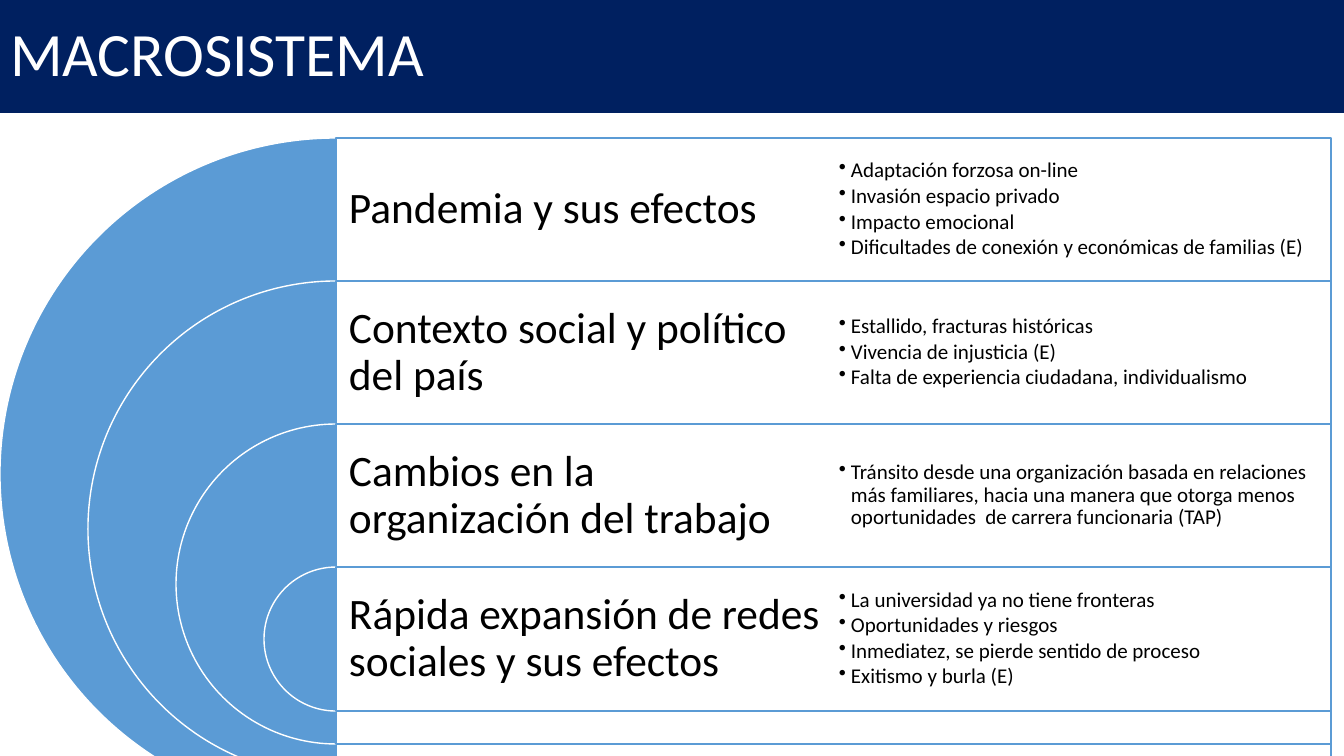
from lxml.etree import SubElement as Sub
from pptx import Presentation
from pptx.dml.color import RGBColor
from pptx.enum.shapes import MSO_SHAPE as Kind
from pptx.enum.text import MSO_ANCHOR as Anchor, PP_ALIGN as Align
from pptx.oxml.ns import qn
from pptx.util import Emu, Pt

TITLE = "MACROSISTEMA"
ROWS = [
    ("Pandemia y sus efectos", [
        "Adaptación forzosa on-line",
        "Invasión espacio privado",
        "Impacto emocional",
        "Dificultades de conexión y económicas de familias (E)",
    ]),
    ("Contexto social y político del país", [
        "Estallido, fracturas históricas",
        "Vivencia de injusticia (E)",
        "Falta de experiencia ciudadana, individualismo",
    ]),
    ("Cambios en la organización del trabajo", [
        "Tránsito desde una organización basada en relaciones más familiares, "
        "hacia una manera que otorga menos oportunidades  de carrera funcionaria (TAP)",
    ]),
    ("Rápida expansión de redes sociales y sus efectos", [
        "La universidad ya no tiene fronteras",
        "Oportunidades y riesgos",
        "Inmediatez, se pierde sentido de proceso",
        "Exitismo y burla (E)",
    ]),
]

NAVY = RGBColor(0x00, 0x20, 0x60)
BLUE = RGBColor(0x5B, 0x9B, 0xD5)
WHITE = RGBColor(0xFF, 0xFF, 0xFF)
BLACK = RGBColor(0x00, 0x00, 0x00)
FONT = "Calibri"

WIDE, HIGH = 1344, 756
BAR = 113
MID, TOP, ROW = 336, 138, 143
RING, STEP = 672, 176
PANEL, HALF = 995, 497
HANG = 12


def px(n):
    return Emu(round(n * 914400 / 100.8))


def write(shape, lines, size, color=BLACK, pad=10, gap=0, dots=False):
    frame = shape.text_frame
    frame.word_wrap = True
    frame.vertical_anchor = Anchor.MIDDLE
    frame.margin_left = frame.margin_right = px(pad)
    frame.margin_top = frame.margin_bottom = px(pad)
    for i, line in enumerate(lines):
        para = frame.add_paragraph() if i else frame.paragraphs[0]
        para.alignment = Align.LEFT
        para.line_spacing = 0.9
        para.space_after = Pt(gap)
        run = para.add_run()
        run.text = line
        run.font.size = Pt(size)
        run.font.name = FONT
        run.font.color.rgb = color
        if dots:
            para.level = 1
            props = para._p.get_or_add_pPr()
            props.set("marL", str(px(HANG)))
            props.set("indent", str(-px(HANG)))
            Sub(props, qn("a:buChar")).set("char", "•")


def paint(shape, fill, line, width):
    shape.fill.solid()
    shape.fill.fore_color.rgb = fill
    shape.line.color.rgb = line
    shape.line.width = Pt(width)


def draw(kind, x, y, w, h, fill, line):
    shape = slide.shapes.add_shape(kind, px(x), px(y), px(w), px(h))
    shape.shadow.inherit = False
    paint(shape, fill, line, 1)
    return shape


def label(x, y, lines, size, **form):
    box = slide.shapes.add_textbox(px(x), px(y), px(HALF), px(ROW))
    write(box, lines, size, **form)


deck = Presentation()
deck.slide_width, deck.slide_height = px(WIDE), px(HIGH)
slide = deck.slides.add_slide(deck.slide_layouts[5])

head = slide.shapes.title
head.left, head.top, head.width, head.height = px(0), px(0), px(WIDE), px(BAR)
paint(head, NAVY, NAVY, 0.75)
write(head, [TITLE], 44, color=WHITE)

for i, (topic, items) in enumerate(ROWS):
    y = TOP + i * ROW
    size = RING - i * STEP
    pie = draw(Kind.PIE, MID - size / 2, y, size, size, BLUE, WHITE)
    pie.adjustments[0], pie.adjustments[1] = 54, 162
    panel = draw(Kind.RECTANGLE, MID, y, PANEL, size, WHITE, BLUE)
    tint = panel.fill._xPr.find(qn("a:solidFill"))[0]
    Sub(tint, qn("a:alpha")).set("val", "90000")
    label(MID, y, [topic], 31, pad=13)
    label(MID + HALF, y, items, 15, pad=6, gap=2, dots=True)

deck.save("out.pptx")
